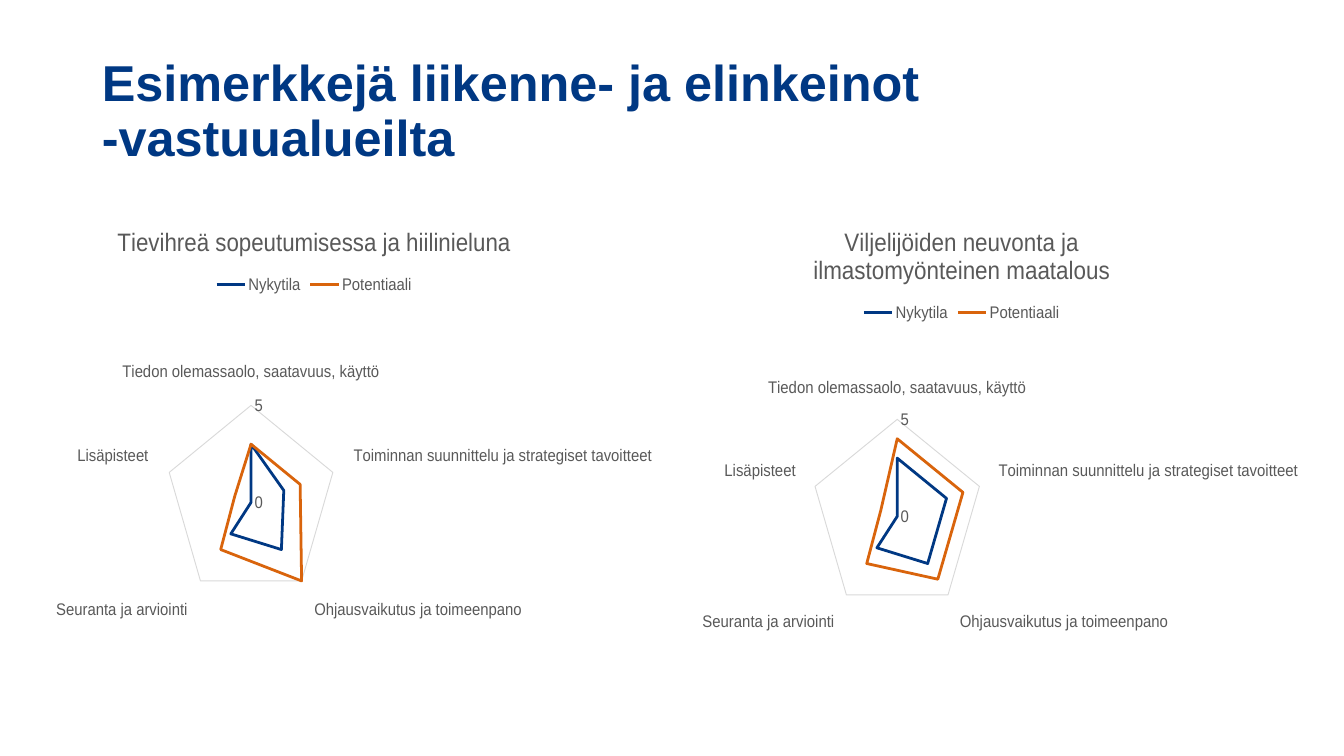
import pptx
import pptx.chart.data
import pptx.dml.color
import pptx.enum.chart
import pptx.enum.text
import pptx.util

NAVY = pptx.dml.color.RGBColor(0x00, 0x38, 0x83)
ORANGE = pptx.dml.color.RGBColor(0xD9, 0x64, 0x0C)
GREY = pptx.dml.color.RGBColor(0x59, 0x59, 0x59)
PALE = pptx.dml.color.RGBColor(0xD9, 0xD9, 0xD9)
FONT = "Arial"
LEFT, TOP, STEP = 0.45, 2.04, 6.41
CHART_W, CHART_H = 6.02, 4.75
CRITERIA = [
    "Tiedon olemassaolo, saatavuus, käyttö",
    "Toiminnan suunnittelu ja strategiset tavoitteet",
    "Ohjausvaikutus ja toimeenpano",
    "Seuranta ja arviointi",
    "Lisäpisteet",
]
SERIES = [("Nykytila", NAVY), ("Potentiaali", ORANGE)]
CHARTS = [
    ("Tievihreä sopeutumisessa ja hiilinieluna",
     [(3, 2, 3, 2, 0), (3, 3, 5, 3, 1)]),
    ("Viljelijöiden neuvonta ja ilmastomyönteinen maatalous",
     [(3, 3, 3, 2, 0), (4, 4, 4, 3, 1)]),
]


def style_font(font, size, color, bold=False):
    """Set the typeface, size, colour and weight of a font."""
    font.name = FONT
    font.size = pptx.util.Pt(size)
    font.bold = bold
    font.color.rgb = color


def style_line(line, color, width):
    """Set the colour and width of a line."""
    line.color.rgb = color
    line.width = pptx.util.Pt(width)


def add_heading(s, text):
    """Add the slide heading."""
    sp = s.shapes.add_textbox(*map(pptx.util.Inches, (1.01, 0.51, 11.63, 1.22)))
    tf = sp.text_frame
    tf.word_wrap = True
    tf.vertical_anchor = pptx.enum.text.MSO_ANCHOR.MIDDLE
    tf.margin_left = tf.margin_right = tf.margin_top = tf.margin_bottom = 0
    p = tf.paragraphs[0]
    p.line_spacing = 0.9
    r = p.add_run()
    r.text = text
    style_font(r.font, 36, NAVY, True)


def style_axes(chart):
    """Show one outer ring with a scale from 0 to 5."""
    for axis in (chart.category_axis, chart.value_axis):
        axis.major_tick_mark = pptx.enum.chart.XL_TICK_MARK.NONE
        axis.minor_tick_mark = pptx.enum.chart.XL_TICK_MARK.NONE
        style_font(axis.tick_labels.font, 12, GREY)
    chart.category_axis.has_major_gridlines = False
    style_line(chart.category_axis.format.line, PALE, 0.75)
    scale = chart.value_axis
    scale.minimum_scale, scale.maximum_scale, scale.major_unit = 0, 5, 5
    scale.has_major_gridlines = True
    style_line(scale.major_gridlines.format.line, PALE, 0.75)
    scale.format.line.fill.background()


def add_radar(s, column, title, values):
    """Add a radar chart with its title and legend in a column."""
    data = pptx.chart.data.CategoryChartData()
    data.categories = CRITERIA
    for (name, _), scores in zip(SERIES, values):
        data.add_series(name, scores)
    box = map(pptx.util.Inches, (LEFT + column * STEP, TOP, CHART_W, CHART_H))
    chart = s.shapes.add_chart(pptx.enum.chart.XL_CHART_TYPE.RADAR, *box, data).chart
    chart.font.name = FONT
    chart.font.size = pptx.util.Pt(10)
    chart.plots[0].vary_by_categories = False
    chart.has_title = True
    chart.chart_title.include_in_layout = False
    r = chart.chart_title.text_frame.paragraphs[0].add_run()
    r.text = title
    style_font(r.font, 18, GREY)
    chart.has_legend = True
    chart.legend.position = pptx.enum.chart.XL_LEGEND_POSITION.TOP
    chart.legend.include_in_layout = False
    style_font(chart.legend.font, 12, GREY)
    style_axes(chart)
    for series, (_, color) in zip(chart.plots[0].series, SERIES):
        series.smooth = False
        series.marker.style = pptx.enum.chart.XL_MARKER_STYLE.NONE
        style_line(series.format.line, color, 2.25)


def main():
    """Build and save the slide."""
    prs = pptx.Presentation()
    prs.slide_width = pptx.util.Inches(13.33)
    prs.slide_height = pptx.util.Inches(7.5)
    s = prs.slides.add_slide(prs.slide_layouts[6])
    add_heading(s, "Esimerkkejä liikenne- ja elinkeinot -vastuualueilta")
    for column, (title, values) in enumerate(CHARTS):
        add_radar(s, column, title, values)
    prs.save("out.pptx")


if __name__ == "__main__":
    main()
